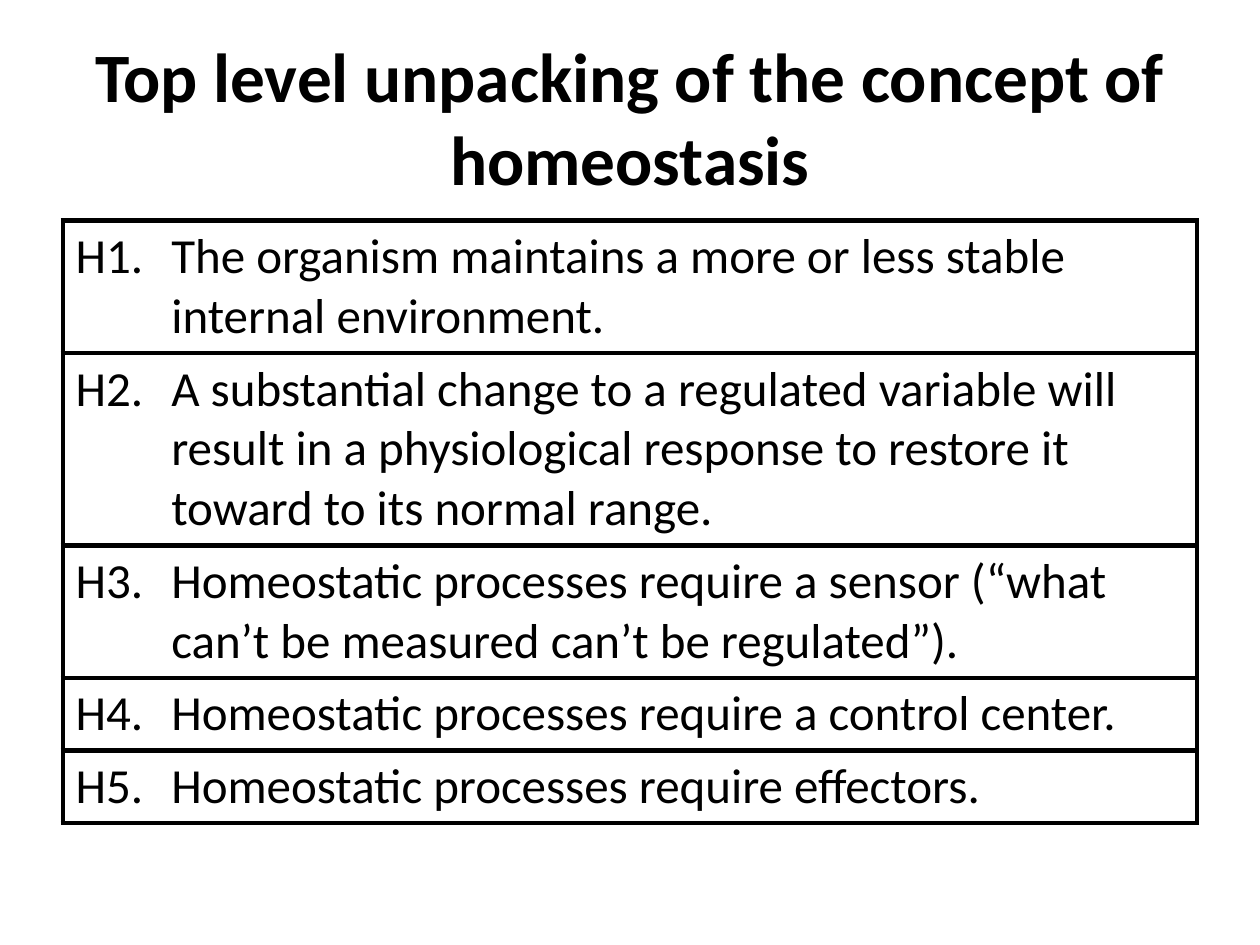
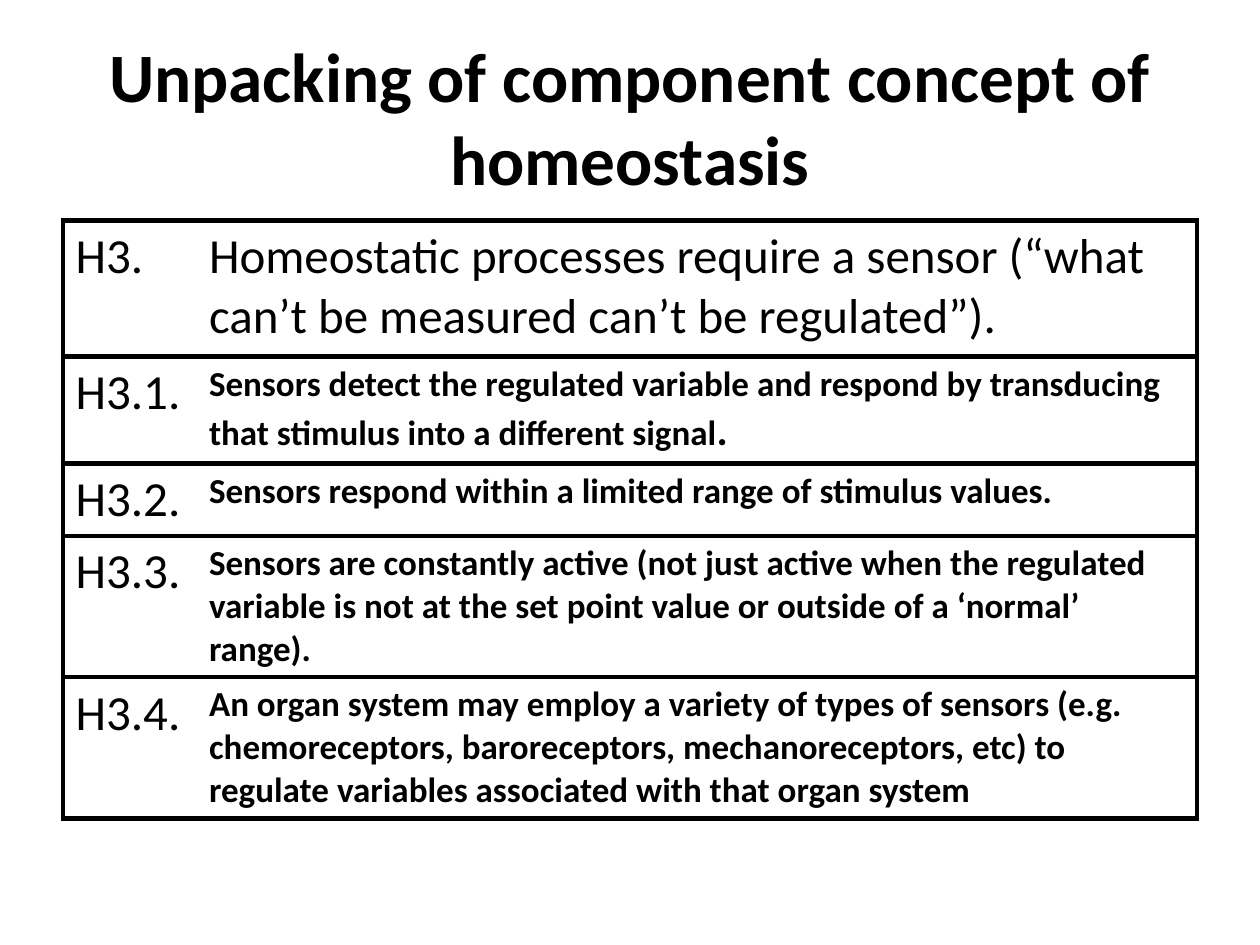
from dataclasses import dataclass

from lxml.etree import SubElement
from pptx import Presentation
from pptx.dml.color import RGBColor
from pptx.enum.text import MSO_ANCHOR as Anchor, MSO_AUTO_SIZE as AutoSize, PP_ALIGN as Align
from pptx.oxml.ns import qn
from pptx.util import Cm, Pt

FONT = "Calibri"
INK = "000000"
PAPER = "FFFFFF"
TITLE_ONLY = 5
LEFT, WIDTH = Cm(1.27), Cm(22.86)
TITLE_TOP, TITLE_HEIGHT = Cm(0.76), Cm(3.18)
TABLE_TOP = Cm(4.45)
BORDER_WIDTH = Pt(3)

TITLE_FORMAT = {"name": FONT, "size": Pt(39.6), "bold": True}
CONCEPT_FORMAT = {"name": FONT, "size": Pt(28), "bold": False}
DETAIL_FORMAT = {"name": FONT, "size": Pt(20), "bold": True}
LARGE_DETAIL_FORMAT = DETAIL_FORMAT | {"size": Pt(24)}


@dataclass(frozen=True)
class Span:
    text: str
    format: dict


@dataclass(frozen=True)
class Statement:
    label: str
    spans: tuple[Span, ...]
    height: float


@dataclass(frozen=True)
class ConceptSlide:
    title: str
    label_width: float
    statements: tuple[Statement, ...]


def concept(label: str, text: str, height: float) -> Statement:
    return Statement(label, (Span(text, CONCEPT_FORMAT),), height)


def detail(label: str, text: str, height: float) -> Statement:
    return Statement(label, (Span(text, DETAIL_FORMAT),), height)


SENSOR_TEXT = "Homeostatic processes require a sensor (“what can’t be measured can’t be regulated”)."

CONCEPT_SLIDES = (
    ConceptSlide("Top level unpacking of the concept of homeostasis", 1.93, (
        concept("H1.", "The organism maintains a more or less stable internal environment.", 2.66),
        concept("H2.", "A substantial change to a regulated variable will result in a "
                "physiological response to restore it toward to its normal range.", 3.86),
        concept("H3.", SENSOR_TEXT, 2.66),
        concept("H4.", "Homeostatic processes require a control center.", 1.46),
        concept("H5.", "Homeostatic processes require effectors.", 1.46),
    )),
    ConceptSlide("Unpacking of component concept of homeostasis", 2.69, (
        concept("H3.", SENSOR_TEXT, 2.74),
        Statement("H3.1.", (
            Span("Sensors detect the regulated variable and respond by transducing "
                 "that stimulus into a different signal", DETAIL_FORMAT),
            Span(".", LARGE_DETAIL_FORMAT),
        ), 2.14),
        detail("H3.2.", "Sensors respond within a limited range of stimulus values.", 1.46),
        detail("H3.3.", "Sensors are constantly active (not just active when the regulated "
               "variable is not at the set point value or outside of a ‘normal’ range).", 2.83),
        detail("H3.4.", "An organ system may employ a variety of types of sensors (e.g. "
               "chemoreceptors, baroreceptors, mechanoreceptors, etc) to regulate "
               "variables associated with that organ system", 2.83),
    )),
)


def color(value: str) -> RGBColor:
    return RGBColor.from_string(value)


def set_attributes(target, values: dict) -> None:
    for name, value in values.items():
        setattr(target, name, value)


def write_spans(paragraph, spans: tuple[Span, ...]) -> None:
    for span in spans:
        run = paragraph.add_run()
        run.text = span.text
        set_attributes(run.font, span.format)
        run.font.color.rgb = color(INK)


def draw_borders(cell, visible_sides: str) -> None:
    properties = cell._tc.get_or_add_tcPr()
    for side in "LRTB":
        line = SubElement(properties, qn(f"a:ln{side}"), w=str(BORDER_WIDTH))
        if side in visible_sides:
            fill = SubElement(line, qn("a:solidFill"))
            SubElement(fill, qn("a:srgbClr"), val=INK)
        else:
            SubElement(line, qn("a:noFill"))


def fill_cell(cell, spans: tuple[Span, ...], visible_sides: str) -> None:
    write_spans(cell.text_frame.paragraphs[0], spans)
    draw_borders(cell, visible_sides)
    cell.fill.solid()
    cell.fill.fore_color.rgb = color(PAPER)


def draw_title(slide, text: str) -> None:
    title = slide.shapes.title
    set_attributes(title, {"left": LEFT, "top": TITLE_TOP, "width": WIDTH, "height": TITLE_HEIGHT})
    set_attributes(title.text_frame, {
        "word_wrap": True, "auto_size": AutoSize.NONE, "vertical_anchor": Anchor.MIDDLE,
    })
    paragraph = title.text_frame.paragraphs[0]
    paragraph.alignment = Align.CENTER
    write_spans(paragraph, (Span(text, TITLE_FORMAT),))


def draw_statements(slide, content: ConceptSlide) -> None:
    height = Cm(sum(statement.height for statement in content.statements))
    table = slide.shapes.add_table(
        len(content.statements), 2, LEFT, TABLE_TOP, WIDTH, height).table
    set_attributes(table, {"first_row": False, "horz_banding": False})
    label_width = Cm(content.label_width)
    table.columns[0].width = label_width
    table.columns[1].width = WIDTH - label_width
    for index, statement in enumerate(content.statements):
        table.rows[index].height = Cm(statement.height)
        fill_cell(table.cell(index, 0), (Span(statement.label, CONCEPT_FORMAT),), "LTB")
        fill_cell(table.cell(index, 1), statement.spans, "RTB")


def main() -> None:
    presentation = Presentation()
    set_attributes(presentation, {"slide_width": Cm(25.4), "slide_height": Cm(19.05)})
    for content in CONCEPT_SLIDES:
        slide = presentation.slides.add_slide(presentation.slide_layouts[TITLE_ONLY])
        draw_title(slide, content.title)
        draw_statements(slide, content)
    presentation.save("out.pptx")


if __name__ == "__main__":
    main()
